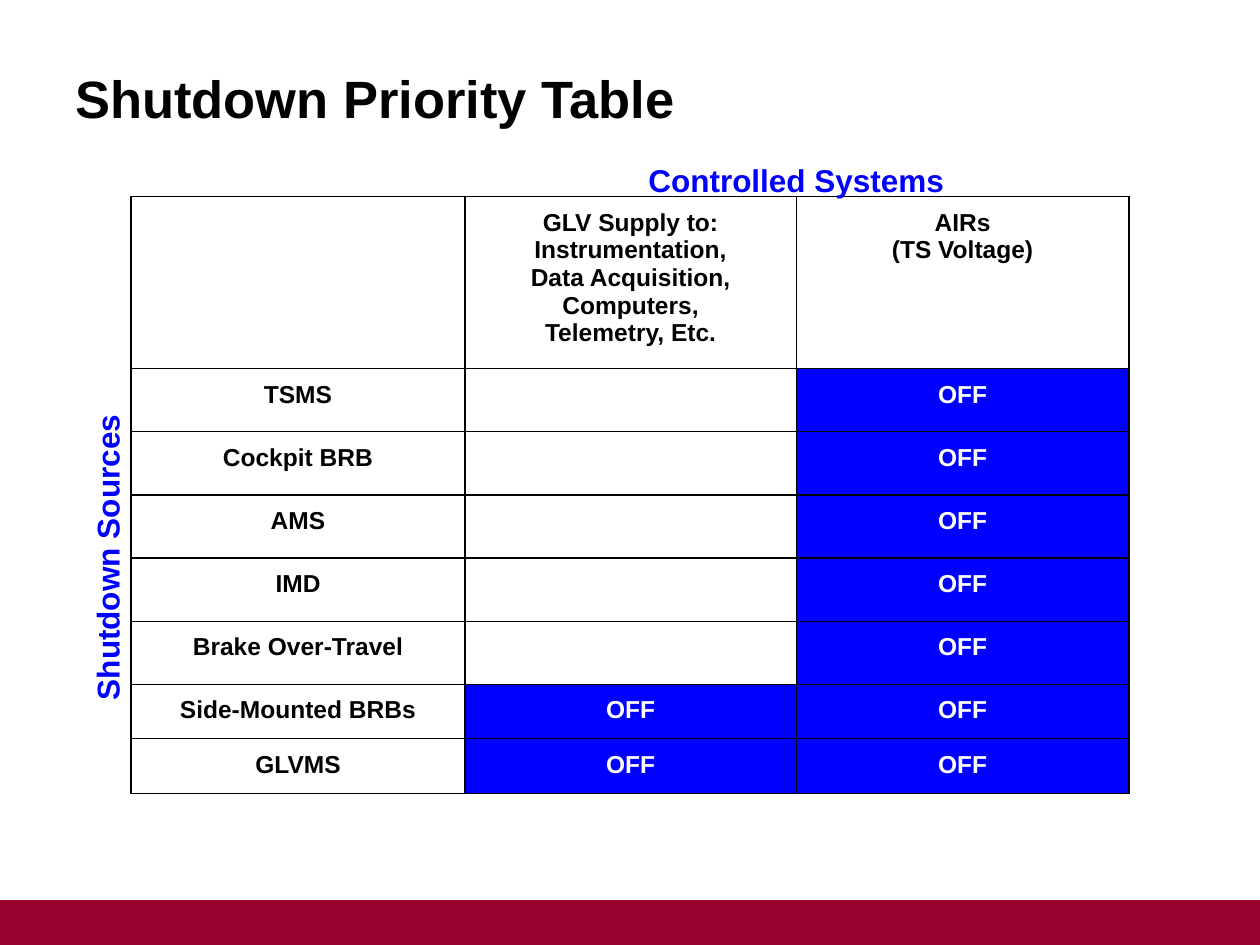
from lxml.etree import SubElement as Sub
from pptx import Presentation as Deck
from pptx.dml.color import RGBColor as Color
from pptx.enum.shapes import MSO_SHAPE as Form
from pptx.enum.text import MSO_ANCHOR as Anchor, PP_ALIGN as Align
from pptx.oxml.ns import qn
from pptx.util import Inches, Pt

BLACK = Color(0x00, 0x00, 0x00)
WHITE = Color(0xFF, 0xFF, 0xFF)
BLUE = Color(0x00, 0x00, 0xFF)
RED = Color(0x98, 0x00, 0x2E)
PAD = Inches(0.1)

HEADS = [
    [],
    ["GLV Supply to:", "Instrumentation,", "Data Acquisition,", "Computers,", "Telemetry, Etc."],
    ["AIRs", "(TS Voltage)"],
]
PARTIAL = ["TSMS", "Cockpit BRB", "AMS", "IMD", "Brake Over-Travel"]
FULL = ["Side-Mounted BRBs", "GLVMS"]
WIDTHS = [2.65, 2.63, 2.64]
HEIGHTS = [1.29] + [0.48] * len(PARTIAL) + [0.42] * len(FULL)


def pad(item):
    item.margin_left = item.margin_right = PAD
    item.margin_top = item.margin_bottom = PAD


def write(frame, lines, size, color, align=Align.CENTER):
    for i, line in enumerate(lines):
        para = frame.add_paragraph() if i else frame.paragraphs[0]
        para.alignment = align
        run = para.add_run()
        run.text = line
        font = run.font
        font.name, font.size, font.bold = "Arial", Pt(size), True
        font.color.rgb = color


def add_label(slide, text, box, size, color, align=Align.CENTER, anchor=Anchor.TOP, turn=0):
    label = slide.shapes.add_textbox(*map(Inches, box))
    label.rotation = turn
    frame = label.text_frame
    frame.word_wrap = True
    frame.vertical_anchor = anchor
    pad(frame)
    write(frame, [text], size, color, align)


def add_bar(slide):
    bar = slide.shapes.add_shape(Form.RECTANGLE, 0, Inches(7.15), Inches(10), Inches(0.35))
    bar.shadow.inherit = False
    bar.fill.solid()
    bar.fill.fore_color.rgb = RED
    bar.line.color.rgb = RED
    bar.line.width = Pt(1.5)


def add_edges(cell):
    props = cell._tc.get_or_add_tcPr()
    for side in ("lnL", "lnR", "lnT", "lnB"):
        edge = Sub(props, qn(f"a:{side}"), w=str(Pt(0.75)))
        fill = Sub(edge, qn("a:solidFill"))
        Sub(fill, qn("a:srgbClr"), val=str(BLACK))


def fill_cell(cell, lines):
    off = lines == ["OFF"]
    pad(cell)
    add_edges(cell)
    if off:
        cell.fill.solid()
        cell.fill.fore_color.rgb = BLUE
    else:
        cell.fill.background()
    write(cell.text_frame, lines, 14, WHITE if off else BLACK)


def add_grid(slide):
    rows = [HEADS]
    rows += [[[name], [], ["OFF"]] for name in PARTIAL]
    rows += [[[name], ["OFF"], ["OFF"]] for name in FULL]
    box = (1.04, 1.56, sum(WIDTHS), sum(HEIGHTS))
    table = slide.shapes.add_table(len(rows), len(WIDTHS), *map(Inches, box)).table
    table.first_row = table.horz_banding = False
    for col, width in zip(table.columns, WIDTHS):
        col.width = Inches(width)
    for row, height, texts in zip(table.rows, HEIGHTS, rows):
        row.height = Inches(height)
        for cell, lines in zip(row.cells, texts):
            fill_cell(cell, lines)


def main():
    deck = Deck()
    deck.slide_width, deck.slide_height = Inches(10), Inches(7.5)
    slide = deck.slides.add_slide(deck.slide_layouts[6])
    add_bar(slide)
    add_label(slide, "Shutdown Priority Table", (0.5, 0, 9, 1.12), 30, BLACK,
              Align.LEFT, Anchor.BOTTOM)
    add_grid(slide)
    add_label(slide, "Controlled Systems", (3.68, 1.18, 5.28, 0.39), 18, BLUE)
    add_label(slide, "Shutdown Sources", (-0.73, 4.25, 3.01, 0.35), 18, BLUE, turn=270)
    deck.save("out.pptx")


if __name__ == "__main__":
    main()
